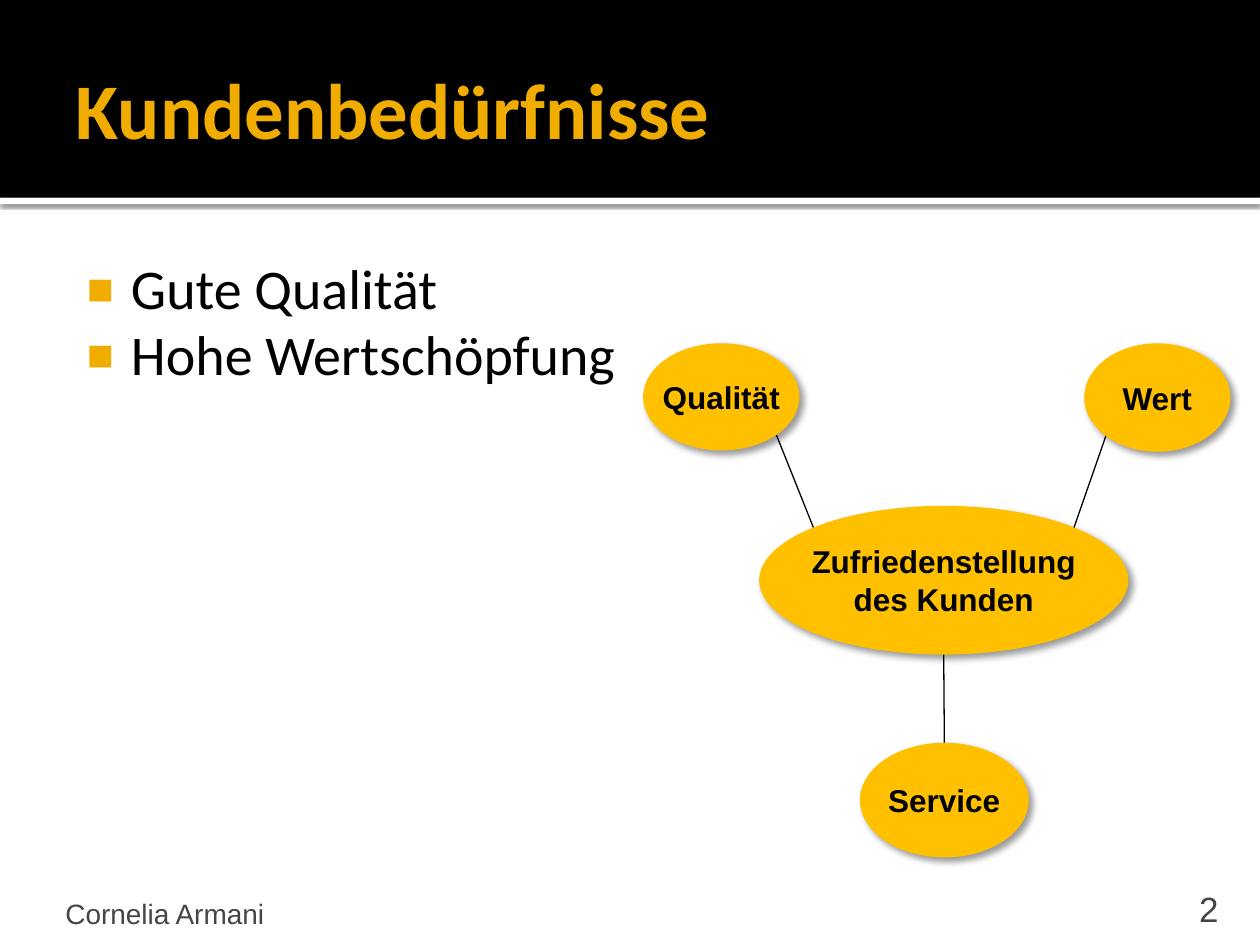
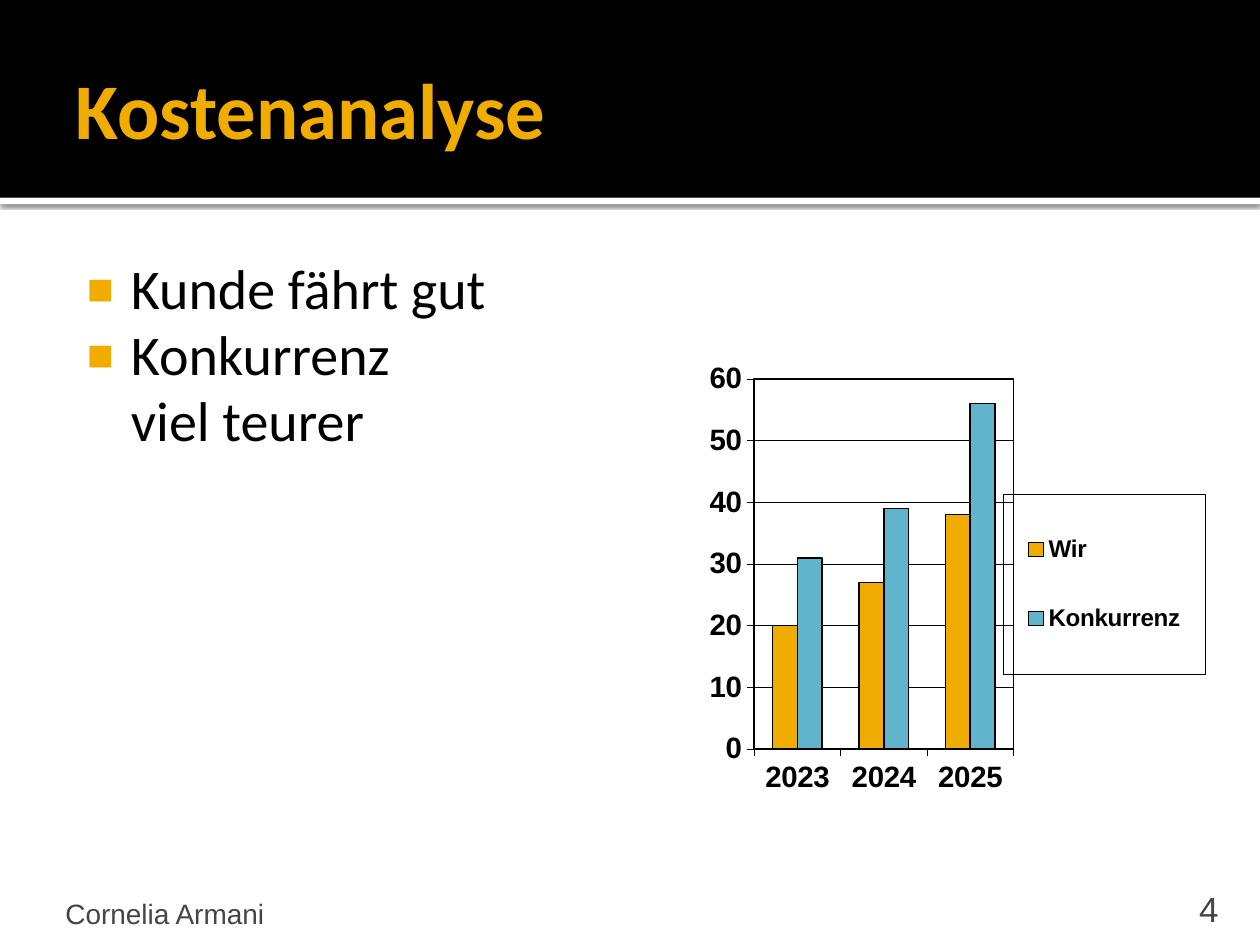
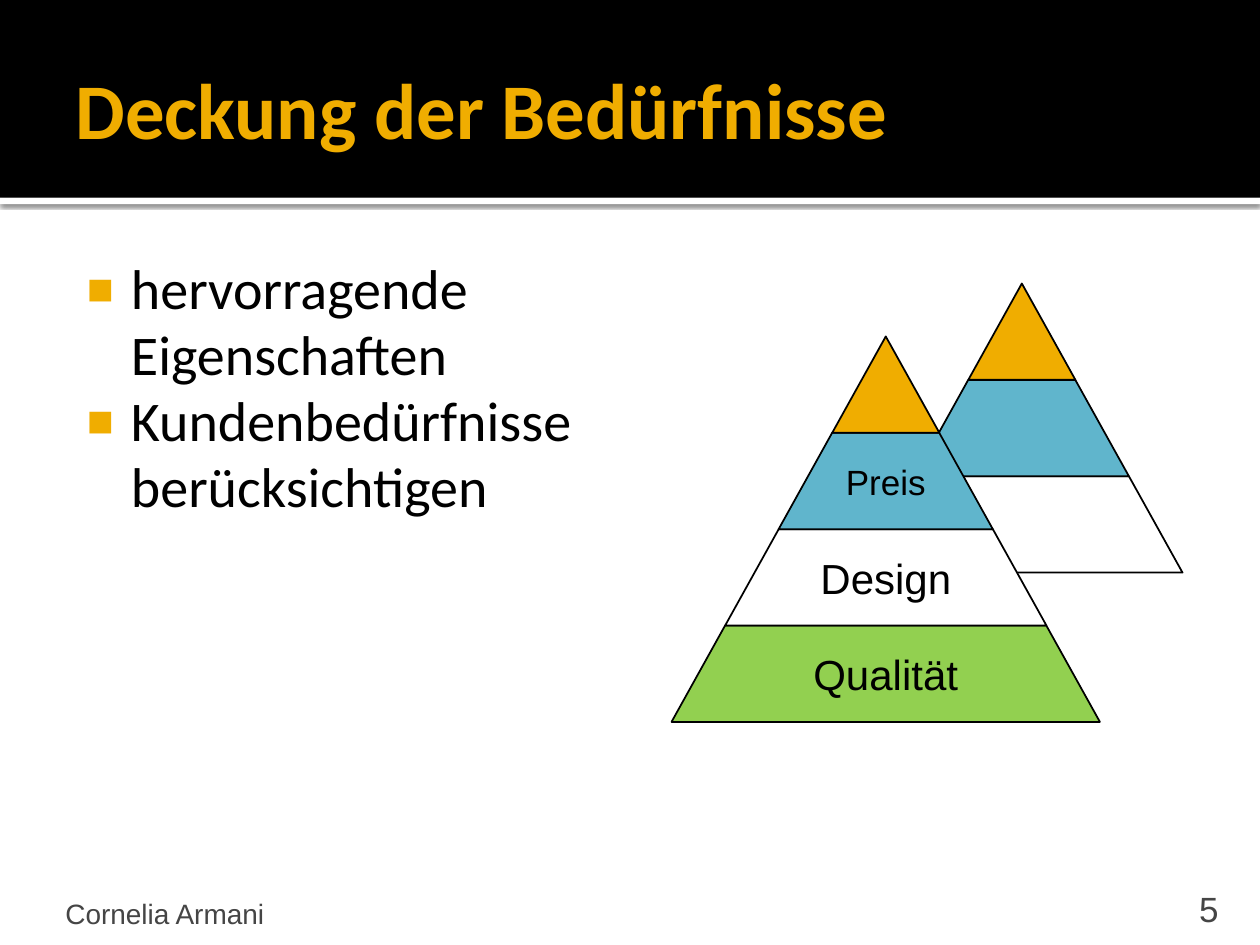
from pptx import Presentation
from pptx.chart.data import CategoryChartData
from pptx.dml.color import RGBColor
from pptx.enum.chart import XL_CHART_TYPE, XL_LEGEND_POSITION, XL_TICK_MARK
from pptx.enum.shapes import MSO_CONNECTOR, MSO_SHAPE
from pptx.enum.text import MSO_ANCHOR, MSO_AUTO_SIZE, PP_ALIGN
from pptx.oxml import parse_xml
from pptx.oxml.ns import nsdecls, qn
from pptx.util import Inches, Pt

BLACK, WHITE, GREY = "000000", "FFFFFF", "454545"
GOLD, AMBER, BLUE, GREEN = "F0AD00", "FFC000", "60B5CC", "92D050"
HEADING, BODY = "Calibri", "Arial"
AUTHOR = "Cornelia Armani"


def rgb(value):
    """Turn a hex string into a colour."""
    return RGBColor.from_string(value)


def style_font(font, size, color=BLACK, name=BODY, bold=False):
    """Set size, colour, typeface and weight of a font."""
    font.size, font.name, font.bold = Pt(size), name, bold
    font.color.rgb = rgb(color)


def style_line(line, width, color=BLACK):
    """Give a line its colour and width in points."""
    line.color.rgb = rgb(color)
    line.width = Pt(width)


def add_shadow(sp, alpha, blur, dist, angle):
    """Add a black outer shadow to a shape whose inherited one is off."""
    sp.element.spPr.find(qn("a:effectLst")).append(parse_xml(
        f'<a:outerShdw {nsdecls("a")} blurRad="{Pt(blur)}" dist="{Pt(dist)}" '
        f'dir="{angle * 60000}" algn="ctr" rotWithShape="0"><a:srgbClr val="{BLACK}">'
        f'<a:alpha val="{alpha * 1000}"/></a:srgbClr></a:outerShdw>'))


def fill_text(tf, lines, size, color=BLACK, name=BODY, bold=False,
              align=PP_ALIGN.LEFT, anchor=MSO_ANCHOR.MIDDLE, wrap=True, insets=None):
    """Write one paragraph per line and format the frame."""
    tf.auto_size, tf.word_wrap, tf.vertical_anchor = MSO_AUTO_SIZE.NONE, wrap, anchor
    if insets:
        (tf.margin_left, tf.margin_top,
         tf.margin_right, tf.margin_bottom) = map(Inches, insets)
    for i, line in enumerate(lines):
        p = tf.add_paragraph() if i else tf.paragraphs[0]
        p.text, p.alignment = line, align
        for r in p.runs:
            style_font(r.font, size, color, name, bold)


def add_text(s, box, lines, size, **options):
    """Add a text box and return its frame."""
    tf = s.shapes.add_textbox(*map(Inches, box)).text_frame
    fill_text(tf, lines, size, **options)
    return tf


def add_band(s, box, color):
    """Add a plain full-width band behind the title."""
    sp = s.shapes.add_shape(MSO_SHAPE.RECTANGLE, *map(Inches, box))
    sp.fill.solid()
    sp.fill.fore_color.rgb = rgb(color)
    sp.line.fill.background()
    sp.shadow.inherit = False
    s.shapes.title.element.addprevious(sp.element)
    return sp


def add_bullets(s, box, points):
    """Add the list with square gold bullets."""
    tf = add_text(s, box, points, 32, name=HEADING, anchor=MSO_ANCHOR.TOP,
                  insets=(0.06, 0.1, 0.1, 0.05))
    for p in tf.paragraphs:
        p.line_spacing = 0.98
        pPr = p._p.get_or_add_pPr()
        pPr.set("marL", str(Inches(0.48)))
        pPr.set("indent", str(Inches(-0.35)))
        for tag in (f'buClr {nsdecls("a")}><a:srgbClr val="{GOLD}"/></a:buClr',
                    f'buSzPct {nsdecls("a")} val="80000"/',
                    f'buFont {nsdecls("a")} typeface="{BODY}"/',
                    f'buChar {nsdecls("a")} char="■"/'):
            pPr.append(parse_xml(f"<a:{tag}>"))


def add_content_slide(prs, title, points, number):
    """Add a slide with bands, title, bullets and footer."""
    s = prs.slides.add_slide(prs.slide_layouts[5])
    add_shadow(add_band(s, (0, 1.57, 10, 0.05), WHITE), 60, 2.5, 0.8, 90)
    add_band(s, (0, 0, 10, 1.57), BLACK)
    sp = s.shapes.title
    sp.left, sp.top, sp.width, sp.height = map(Inches, (0.5, 0.17, 9, 1.37))
    fill_text(sp.text_frame, [title], 45, GOLD, HEADING, True, insets=(0.1, 0.05, 0.05, 0.05))
    add_bullets(s, (0.5, 1.94, 9, 5.06), points)
    add_text(s, (0.47, 7.08, 8.44, 0.3), [AUTHOR], 16, color=GREY,
             anchor=MSO_ANCHOR.BOTTOM, insets=(0.05, 0.05, 0.05, 0))
    add_text(s, (8.97, 7.08, 0.8, 0.3), [str(number)], 20, color=GREY, align=PP_ALIGN.RIGHT,
             anchor=MSO_ANCHOR.BOTTOM, insets=(0.1, 0.05, 0.1, 0))
    return s


def rim(box, dx, dy):
    """Return the point on an ellipse in the direction dx, dy."""
    x, y, w, h = box
    reach = (dx * dx + dy * dy) ** 0.5
    return x + w / 2 * (1 + dx / reach), y + h / 2 * (1 + dy / reach)


def add_needs_diagram(s, x, y):
    """Draw the central need and the three needs linked to it."""
    hub = (x + 0.92, y + 1.29, 2.92, 1.17)
    needs = [("Qualität", (x, y, 1.23, 0.84), -1, -1),
             ("Wert", (x + 3.5, y, 1.15, 0.85), 1, -1),
             ("Service", (x + 1.72, y + 3.17, 1.33, 0.9), 0, 1)]
    for _, box, dx, dy in needs:
        ends = (*rim(hub, dx, dy), *rim(box, -dx, -dy))
        line = s.shapes.add_connector(MSO_CONNECTOR.STRAIGHT, *map(Inches, ends))
        style_line(line.line, 0.75)
        line.element.spPr.append(parse_xml(f'<a:effectLst {nsdecls("a")}/>'))
    ovals = [(["Zufriedenstellung", "des Kunden"], hub)]
    ovals += [([label], box) for label, box, _, _ in needs]
    for lines, box in ovals:
        sp = s.shapes.add_shape(MSO_SHAPE.OVAL, *map(Inches, box))
        sp.fill.solid()
        sp.fill.fore_color.rgb = rgb(AMBER)
        style_line(sp.line, 0.75, AMBER)
        sp.shadow.inherit = False
        add_shadow(sp, 40, 4, 3, 45)
        fill_text(sp.text_frame, lines, 18, bold=True, align=PP_ALIGN.CENTER, wrap=False)


def set_layout(parent, index, box, inner=False):
    """Place a chart part at fractions of the chart's size."""
    for old in parent.findall(qn("c:layout")):
        parent.remove(old)
    target = '<c:layoutTarget val="inner"/>' if inner else ""
    modes = "".join(f'<c:{k}Mode val="edge"/>' for k in "xy")
    sizes = "".join(f'<c:{k} val="{v}"/>' for k, v in zip("xywh", box))
    parent.insert(index, parse_xml(
        f'<c:layout {nsdecls("c")}><c:manualLayout>{target}{modes}{sizes}'
        f'</c:manualLayout></c:layout>'))


def outline(width):
    """Return chart shape properties with a black outline and no fill."""
    return parse_xml(
        f'<c:spPr {nsdecls("c", "a")}><a:noFill/><a:ln w="{Pt(width)}"><a:solidFill>'
        f'<a:srgbClr val="{BLACK}"/></a:solidFill></a:ln></c:spPr>')


def add_cost_chart(s, box):
    """Add the column chart of own and rival costs."""
    data = CategoryChartData()
    data.categories = ["2023", "2024", "2025"]
    data.add_series("Wir", (20, 27, 38))
    data.add_series("Konkurrenz", (31, 39, 56))
    chart = s.shapes.add_chart(XL_CHART_TYPE.COLUMN_CLUSTERED, *map(Inches, box), data).chart
    chart.has_title = False
    style_font(chart.font, 16.8, bold=True)

    plot = chart.plots[0]
    plot.gap_width, plot.overlap, plot.vary_by_categories = 150, 0, False
    for series, color in zip(plot.series, (GOLD, BLUE)):
        series.format.fill.solid()
        series.format.fill.fore_color.rgb = rgb(color)
        style_line(series.format.line, 0.94)

    for axis in (chart.category_axis, chart.value_axis):
        axis.major_tick_mark, axis.minor_tick_mark = XL_TICK_MARK.OUTSIDE, XL_TICK_MARK.NONE
        style_font(axis.tick_labels.font, 16.8, bold=True)
        style_line(axis.format.line, 0.23)
    values = chart.value_axis
    values.minimum_scale, values.maximum_scale, values.major_unit = 0, 60, 10
    style_line(values.major_gridlines.format.line, 0.23)

    chart.has_legend = True
    chart.legend.position = XL_LEGEND_POSITION.RIGHT
    chart.legend.include_in_layout = False
    style_font(chart.legend.font, 13.8, bold=True)
    area, = chart.element.xpath(".//c:plotArea")
    legend, = chart.element.xpath(".//c:legend")
    set_layout(area, 0, (0.13, 0.08, 0.5, 0.74), inner=True)
    set_layout(legend, 1, (0.61, 0.31, 0.39, 0.36))
    area.append(outline(0.94))
    legend.find(qn("c:overlay")).addnext(outline(0.23))


def add_pyramid(s, apex_x, apex_y, tiers):
    """Draw a pyramid of equal tiers, listed from the top down."""
    height, spread = 0.765, 0.425
    for i, (color, label, size) in reversed(list(enumerate(tiers))):
        top, bottom = apex_y + i * height, apex_y + (i + 1) * height
        inner, outer = i * spread, (i + 1) * spread
        points = [(apex_x - outer, bottom), (apex_x - inner, top),
                  (apex_x + inner, top), (apex_x + outer, bottom)]
        corners = [(Inches(x), Inches(y)) for x, y in points]
        builder = s.shapes.build_freeform(*corners[0])
        builder.add_line_segments(corners[1:], close=True)
        sp = builder.convert_to_shape()
        sp.fill.solid()
        sp.fill.fore_color.rgb = rgb(color)
        style_line(sp.line, 1)
        sp.shadow.inherit = False
        if label:
            fill_text(sp.text_frame, [label], size, align=PP_ALIGN.CENTER, wrap=False)


def main():
    """Build the three slides and save them."""
    prs = Presentation()
    prs.slide_width, prs.slide_height = Inches(10), Inches(7.5)

    s = add_content_slide(prs, "Kundenbedürfnisse", ["Gute Qualität", "Hohe Wertschöpfung"], 2)
    add_needs_diagram(s, 5.11, 2.73)

    s = add_content_slide(prs, "Kostenanalyse",
                          ["Kunde fährt gut", "Konkurrenz \nviel teurer"], 4)
    add_cost_chart(s, (5.45, 2.69, 4.12, 3.97))

    s = add_content_slide(prs, "Deckung der Bedürfnisse",
                          ["hervorragende \nEigenschaften",
                           "Kundenbedürfnisse \nberücksichtigen"], 5)
    add_pyramid(s, 8.11, 2.25, [(GOLD, "", 0), (BLUE, "", 0), (WHITE, "", 0)])
    add_pyramid(s, 7.03, 2.67, [(GOLD, "", 0), (BLUE, "Preis", 20),
                                (WHITE, "Design", 24), (GREEN, "Qualität", 24)])
    prs.save("out.pptx")


if __name__ == "__main__":
    main()
